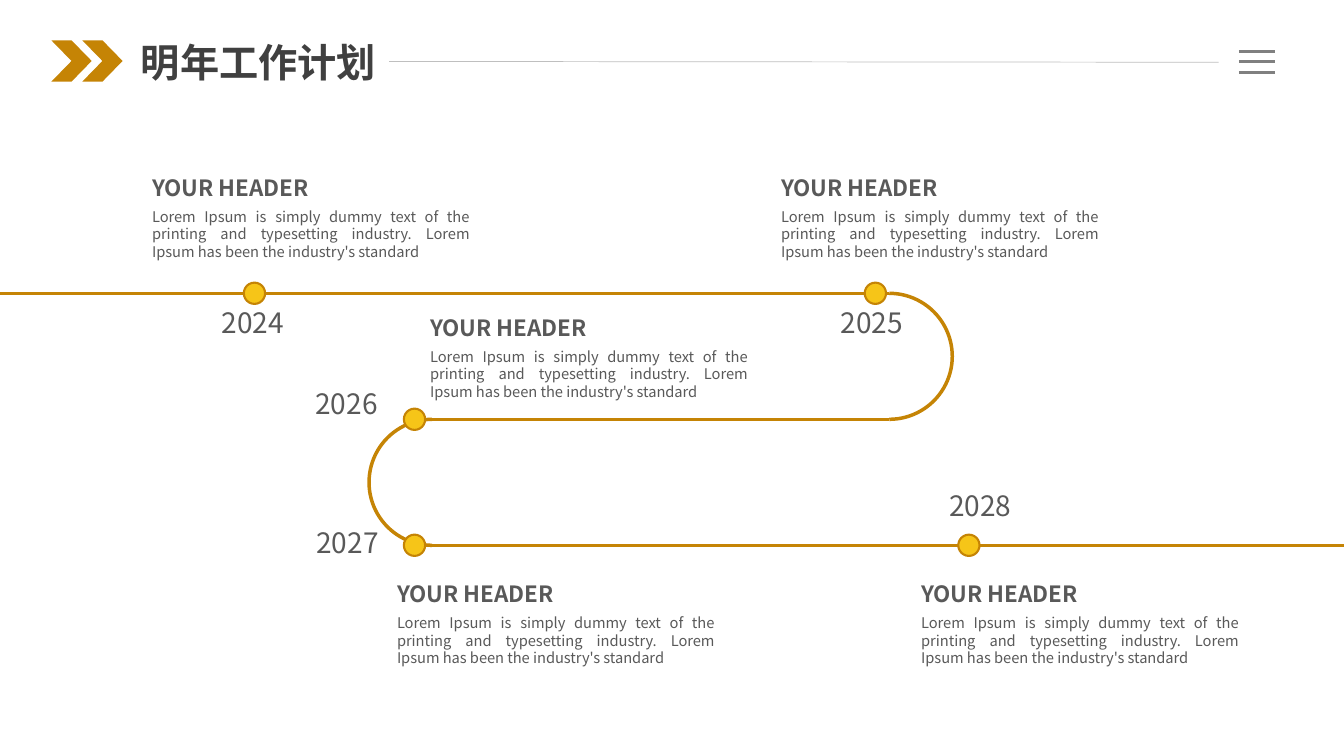
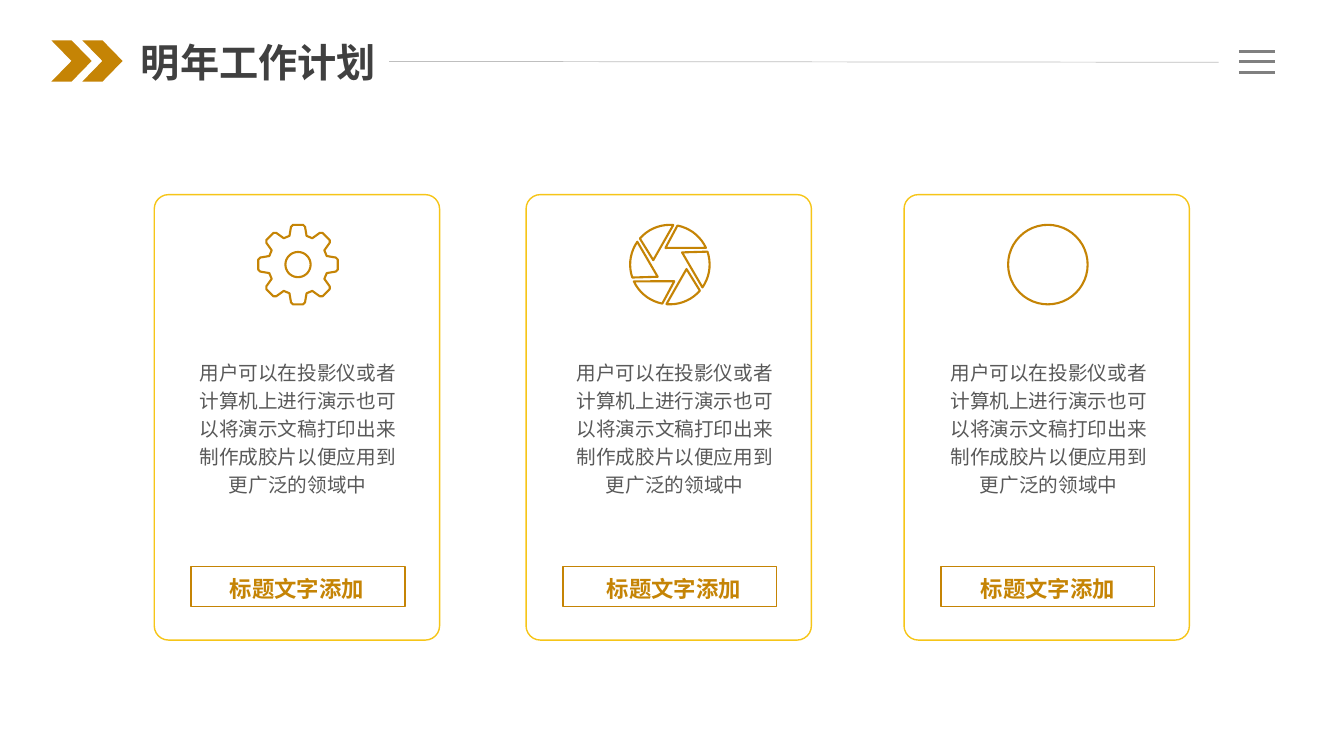
import math
from collections import namedtuple
from dataclasses import dataclass

import pptx
import pptx.dml.color
import pptx.enum.shapes
import pptx.enum.text
import pptx.oxml
import pptx.oxml.ns
import pptx.util
from lxml import etree

Pt = pptx.util.Pt
Shape = pptx.enum.shapes.MSO_SHAPE
Align = pptx.enum.text.PP_ALIGN
Box = namedtuple("Box", "left top width height")
Milestone = namedtuple("Milestone", "year dot_x row year_at note_at")


@dataclass(frozen=True)
class Theme:
    font: str = "Noto Sans CJK SC"
    gold: str = "C58405"
    yellow: str = "F6C518"
    white: str = "FFFFFF"
    title: str = "404040"
    text: str = "595959"
    bars: str = "808080"
    rule: str = "BFBFBF"
    title_size: float = 28
    year_size: float = 20
    heading_size: float = 16
    body_size: float = 14
    note_size: float = 10.5
    track_width: float = 2.5
    icon_width: float = 1.5


THEME = Theme()
PAGE = Box(0, 0, 960, 540)
HEADER = Box(36.7, 23.8, 874.1, 41)

TITLE = "明年工作计划"
NOTE_HEADING = "YOUR HEADER"
NOTE = ("Lorem Ipsum is simply dummy text of the printing and typesetting "
        "industry. Lorem Ipsum has been the industry's standard")
CARD_TEXT = ("用户可以在投影仪或者计算机上进行演示也可以将演示文稿打印出来"
             "制作成胶片以便应用到更广泛的领域中")
CARD_CAPTION = "标题文字添加"

TRACK = Box(0, 209.5, 960, 180)
TRACK_LEFT, TRACK_RIGHT = 308.6, 635.2
MILESTONES = [
    Milestone("2024", 181.8, 0, (151.2, 214.6), (101.5, 121)),
    Milestone("2025", 625.3, 0, (593.3, 214.6), (550.8, 121)),
    Milestone("2026", 296.1, 1, (218.2, 272.9), (300.2, 221)),
    Milestone("2027", 296.1, 2, (218.9, 371.5), (276.5, 411.1)),
    Milestone("2028", 692.1, 2, (671, 345.6), (650.9, 411.1)),
]

CARD_TOP, CARD_WIDTH, CARD_HEIGHT = 139, 203.8, 318.2
ICON_RADIUS = 28.4


def color(value):
    return pptx.dml.color.RGBColor.from_string(value)


def style(shape, fill=None, line=None, width=1.0):
    shape.shadow.inherit = False
    if fill:
        shape.fill.solid()
        shape.fill.fore_color.rgb = color(fill)
    else:
        shape.fill.background()
    if line:
        shape.line.color.rgb = color(line)
        shape.line.width = Pt(width)
    else:
        shape.line.fill.background()


def add_preset(page, kind, box, fill=None, line=None, width=1.0):
    shape = page.shapes.add_shape(kind, *map(Pt, box))
    style(shape, fill, line, width)
    return shape


def add_line(page, start, end, line, width):
    connector = page.shapes.add_connector(
        pptx.enum.shapes.MSO_CONNECTOR.STRAIGHT, *map(Pt, (*start, *end)))
    connector.line.color.rgb = color(line)
    connector.line.width = Pt(width)
    etree.SubElement(connector.element.spPr, pptx.oxml.ns.qn("a:effectLst"))


def add_text(page, box, text, size, ink=THEME.text, bold=False,
             align=Align.LEFT, spacing=None, wrap=True):
    frame = page.shapes.add_textbox(*map(Pt, box)).text_frame
    frame.word_wrap = wrap
    frame.auto_size = pptx.enum.text.MSO_AUTO_SIZE.SHAPE_TO_FIT_TEXT
    para = frame.paragraphs[0]
    para.alignment = align
    if spacing:
        para.line_spacing = spacing
    span = para.add_run()
    span.text = text
    span.font.size = Pt(size)
    span.font.bold = bold
    span.font.color.rgb = color(ink)
    span.font.name = THEME.font
    east_asian = etree.SubElement(span.font._element, pptx.oxml.ns.qn("a:ea"))
    east_asian.set("typeface", THEME.font)


def add_outline(page, contours):
    """Draw closed contours, given as lists of points, as one icon shape."""
    builder = None
    for first, *others in contours:
        x, y = map(Pt, first)
        if builder is None:
            builder = page.shapes.build_freeform(x, y)
        else:
            builder.move_to(x, y)
        builder.add_line_segments([tuple(map(Pt, p)) for p in others], close=True)
    style(builder.convert_to_shape(), THEME.white, THEME.gold, THEME.icon_width)


def polar(center, radius, degrees):
    angle = math.radians(degrees)
    return (center[0] + radius * math.cos(angle),
            center[1] + radius * math.sin(angle))


def draw_gear(page, center):
    half_tooth = [(6.1, -20.5), (5, -27), (3.6, -ICON_RADIUS)]
    tooth = [(-x, y) for x, y in half_tooth] + half_tooth[::-1]
    rim = [polar(center, math.hypot(x, y), math.degrees(math.atan2(y, x)) + turn)
           for turn in range(0, 360, 45) for x, y in tooth]
    hole = [polar(center, 9, turn) for turn in range(0, 360, 10)]
    add_outline(page, [rim, hole])


def draw_aperture(page, center):
    blades = []
    for turn in range(0, 360, 60):
        arc = [polar(center, ICON_RADIUS, turn - 85 - 6 * step)
               for step in range(10)]
        blades.append(arc + [polar(center, 12.3, turn - 165)])
    add_outline(page, blades)


def draw_ring(page, center):
    box = Box(center[0] - ICON_RADIUS, center[1] - ICON_RADIUS,
              2 * ICON_RADIUS, 2 * ICON_RADIUS)
    add_preset(page, Shape.OVAL, box, THEME.white, THEME.gold, THEME.icon_width)


def draw_header(page, box):
    for index in range(2):
        add_preset(page, Shape.CHEVRON,
                   Box(box.left + 22.1 * index, box.top + 5, 28.8, 29.5),
                   THEME.gold)
    right, middle = box.left + box.width, box.top + 20.4
    add_line(page, (box.left + 241.2, middle - 0.3), (right - 40.3, middle + 0.3),
             THEME.rule, 0.5)
    for offset in (-7.5, 0, 7.5):
        add_line(page, (right - 25.9, middle + offset), (right, middle + offset),
                 THEME.bars, 2.25)
    add_text(page, Box(box.left + 56.9, box.top, 184.3, box.height), TITLE,
             THEME.title_size, THEME.title, bold=True, wrap=False)


def draw_track(page, box):
    """Draw three horizontal runs joined by a half turn on each side."""
    pitch = box.height / 2
    runs = [(box.left, TRACK_RIGHT), (TRACK_LEFT, TRACK_RIGHT),
            (TRACK_LEFT, box.left + box.width)]
    for row, (start, end) in enumerate(runs):
        y = box.top + row * pitch
        add_line(page, (start, y), (end, y), THEME.gold, THEME.track_width)
    # Arc adjustments count 0.6 of a degree each... 162 is the top, 54 the bottom.
    for row, (x, start, end) in enumerate([(TRACK_RIGHT, 162, 54),
                                           (TRACK_LEFT, 54, 162)]):
        turn = add_preset(page, Shape.ARC,
                          Box(x - pitch / 2, box.top + row * pitch, pitch, pitch),
                          line=THEME.gold, width=THEME.track_width)
        turn.adjustments[0] = start
        turn.adjustments[1] = end


def draw_milestone(page, milestone, track):
    size = 15.2
    y = track.top + milestone.row * track.height / 2
    add_preset(page, Shape.OVAL,
               Box(milestone.dot_x - size / 2, y - size / 2, size, size),
               THEME.yellow, THEME.gold, 1.5)
    add_text(page, Box(*milestone.year_at, 61.9, 31.7), milestone.year,
             THEME.year_size, wrap=False)
    left, top = milestone.note_at
    add_text(page, Box(left, top + 23.8, 241.2, 45.4), NOTE, THEME.note_size,
             align=Align.JUSTIFY)
    add_text(page, Box(left, top, 171.4, 26.6), NOTE_HEADING,
             THEME.heading_size, bold=True)


def draw_card(page, box, text_left, draw_icon):
    frame = add_preset(page, Shape.ROUNDED_RECTANGLE, box, line=THEME.yellow)
    frame.adjustments[0] = 0.05
    center = box.left + box.width / 2 + 0.8
    draw_icon(page, (center, box.top + 50))
    label = Box(center - 76.4, box.top + 265.6, 152.8, 28.8)
    add_preset(page, Shape.RECTANGLE, label, THEME.white, THEME.gold)
    add_text(page, Box(text_left, box.top + 111.6, 163.4, 108.7), CARD_TEXT,
             THEME.body_size, align=Align.CENTER, spacing=1.2)
    add_text(page, Box(text_left - 7.1, label.top - 1.4, 176.4, 28.8),
             CARD_CAPTION, THEME.heading_size, THEME.gold, bold=True,
             align=Align.CENTER, spacing=1.2)


def add_page(deck):
    page = deck.slides.add_slide(deck.slide_layouts[6])
    draw_header(page, HEADER)
    return page


def build_timeline(deck):
    page = add_page(deck)
    draw_track(page, TRACK)
    for milestone in MILESTONES:
        draw_milestone(page, milestone, TRACK)


def build_cards(deck):
    page = add_page(deck)
    for left, text_left, draw_icon in [(110.2, 131, draw_gear),
                                       (375.8, 400.3, draw_aperture),
                                       (645.8, 667.4, draw_ring)]:
        draw_card(page, Box(left, CARD_TOP, CARD_WIDTH, CARD_HEIGHT),
                  text_left, draw_icon)


def main():
    deck = pptx.Presentation()
    deck.slide_width, deck.slide_height = Pt(PAGE.width), Pt(PAGE.height)
    build_timeline(deck)
    build_cards(deck)
    deck.save("out.pptx")


if __name__ == "__main__":
    main()
